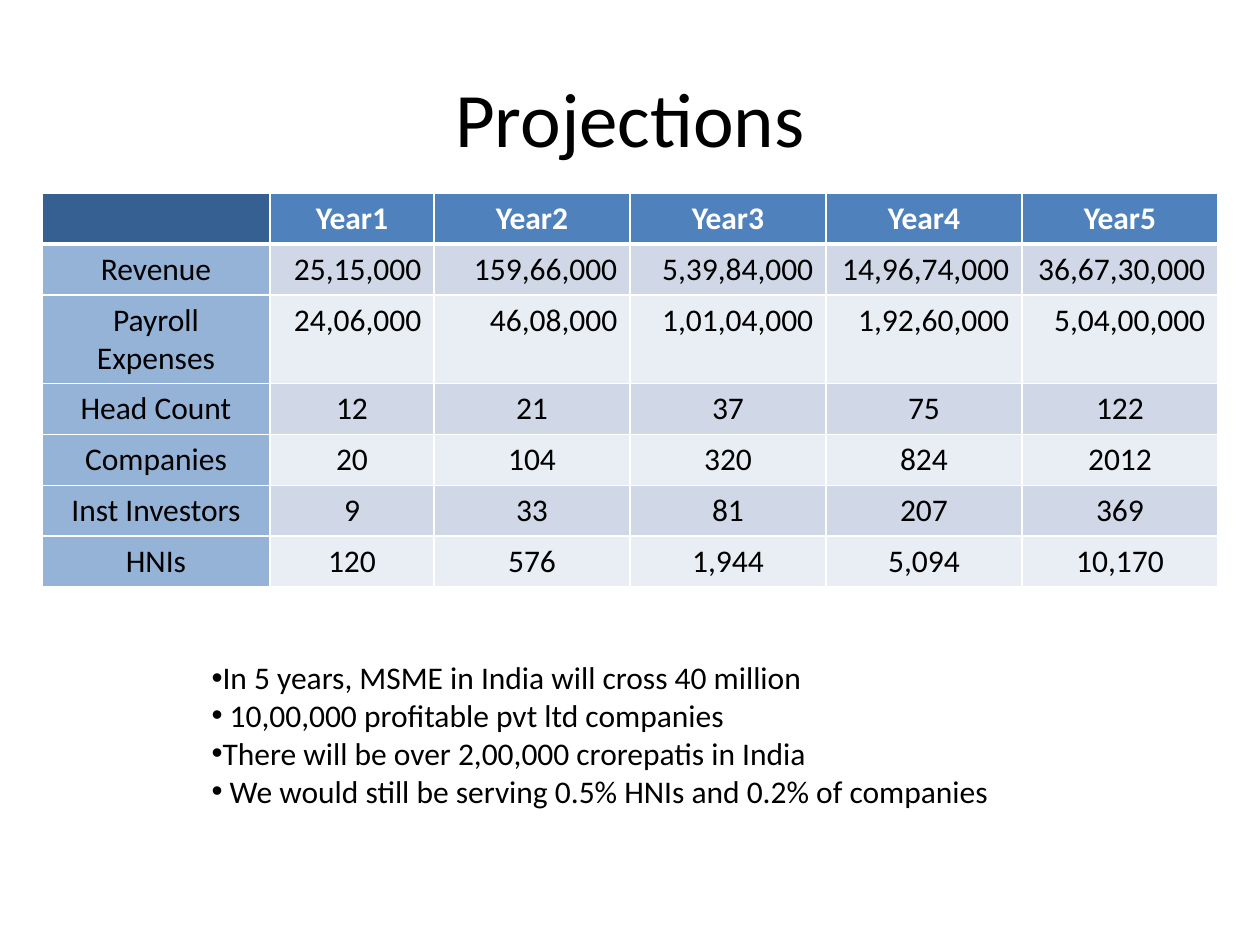
from dataclasses import dataclass

from lxml.etree import SubElement
from pptx import Presentation
from pptx.dml.color import RGBColor
from pptx.enum.text import MSO_ANCHOR, MSO_AUTO_SIZE, PP_ALIGN as Align
from pptx.oxml.ns import qn
from pptx.util import Pt

EMU_PER_PX = 914400 / 126


def px(length):
    return round(length * EMU_PER_PX)


@dataclass(frozen=True)
class Theme:
    font: str = "Calibri"
    title_size: int = 44
    text_size: int = 18
    black: str = "000000"
    white: str = "FFFFFF"
    corner: str = "376092"
    header: str = "4F81BD"
    row_label: str = "95B3D7"
    bands: tuple = ("D0D8E8", "E9EDF4")
    thin_line: int = 1
    header_line: int = 3


def write_text(paragraph, text, *, font, size, color, bold=False, align=Align.LEFT):
    paragraph.alignment = align
    run = paragraph.add_run()
    run.text = text
    run.font.name = font
    run.font.size = Pt(size)
    run.font.bold = bold
    run.font.color.rgb = RGBColor.from_string(color)


def set_borders(cell, color, width, bottom_width):
    properties = cell._tc.get_or_add_tcPr()
    for side in "LRTB":
        points = bottom_width if side == "B" else width
        line = SubElement(properties, qn(f"a:ln{side}"), w=str(Pt(points)))
        fill = SubElement(line, qn("a:solidFill"))
        SubElement(fill, qn("a:srgbClr"), val=color)


class SlideBuilder:
    def __init__(self, slide, theme):
        self.slide = slide
        self.theme = theme

    def place(self, shape, left, top, width, height):
        shape.left, shape.top = px(left), px(top)
        shape.width, shape.height = px(width), px(height)

    def title(self, text, *box):
        shape = self.slide.shapes.title
        self.place(shape, *box)
        shape.text_frame.vertical_anchor = MSO_ANCHOR.MIDDLE
        write_text(shape.text_frame.paragraphs[0], text, font=self.theme.font,
                   size=self.theme.title_size, color=self.theme.black,
                   align=Align.CENTER)

    def bullets(self, lines, *box):
        shape = self.slide.placeholders[1]
        self.place(shape, *box)
        frame = shape.text_frame
        frame.word_wrap = True
        frame.auto_size = MSO_AUTO_SIZE.SHAPE_TO_FIT_TEXT
        for index, line in enumerate(lines):
            paragraph = frame.add_paragraph() if index else frame.paragraphs[0]
            write_text(paragraph, line, font=self.theme.font,
                       size=self.theme.text_size, color=self.theme.black)
            paragraph.space_before = Pt(0)
            properties = paragraph._p.get_or_add_pPr()
            properties.set("marL", "0")
            properties.set("indent", "0")
            SubElement(properties, qn("a:buFont"), typeface="Arial")
            SubElement(properties, qn("a:buChar"), char="•")

    def table(self, rows, left, top, column_widths, row_height, money_rows):
        shape = self.slide.shapes.add_table(
            len(rows), len(column_widths), px(left), px(top),
            px(sum(column_widths)), px(row_height * len(rows)))
        table = shape.table
        for column, width in zip(table.columns, column_widths):
            column.width = px(width)
        for row_index, values in enumerate(rows):
            table.rows[row_index].height = px(row_height)
            for column_index, value in enumerate(values):
                is_money = values[0] in money_rows and column_index > 0
                self.cell(table.cell(row_index, column_index), value,
                          row_index, column_index,
                          Align.RIGHT if is_money else Align.CENTER)

    def cell(self, cell, text, row, column, align):
        theme = self.theme
        is_header = row == 0
        set_borders(cell, theme.white, theme.thin_line,
                    theme.header_line if is_header else theme.thin_line)
        if is_header:
            color = theme.header if column else theme.corner
        else:
            color = theme.bands[(row - 1) % 2] if column else theme.row_label
        cell.fill.solid()
        cell.fill.fore_color.rgb = RGBColor.from_string(color)
        if text:
            write_text(cell.text_frame.paragraphs[0], text, font=theme.font,
                       size=theme.text_size, bold=is_header, align=align,
                       color=theme.white if is_header else theme.black)


PROJECTIONS = [
    ["", "Year1", "Year2", "Year3", "Year4", "Year5"],
    ["Revenue", "25,15,000", "159,66,000", "5,39,84,000", "14,96,74,000", "36,67,30,000"],
    ["Payroll Expenses", "24,06,000", "46,08,000", "1,01,04,000", "1,92,60,000", "5,04,00,000"],
    ["Head Count", "12", "21", "37", "75", "122"],
    ["Companies", "20", "104", "320", "824", "2012"],
    ["Inst Investors", "9", "33", "81", "207", "369"],
    ["HNIs", "120", "576", "1,944", "5,094", "10,170"],
]
OUTLOOK = [
    "In 5 years, MSME in India will cross 40 million",
    " 10,00,000 profitable pvt ltd companies",
    "There will be over 2,00,000 crorepatis in India",
    " We would still be serving 0.5% HNIs and 0.2% of companies",
]


def main():
    presentation = Presentation()
    presentation.slide_width, presentation.slide_height = px(1260), px(945)
    title_and_content = presentation.slide_layouts[1]
    builder = SlideBuilder(presentation.slides.add_slide(title_and_content), Theme())
    builder.title("Projections", 63, 38, 1134, 158)
    builder.table(PROJECTIONS, left=42, top=193,
                  column_widths=[228, 164] + [196] * 4, row_height=51,
                  money_rows=("Revenue", "Payroll Expenses"))
    builder.bullets(OUTLOOK, 199, 652, 819, 165)
    presentation.save("out.pptx")


if __name__ == "__main__":
    main()
